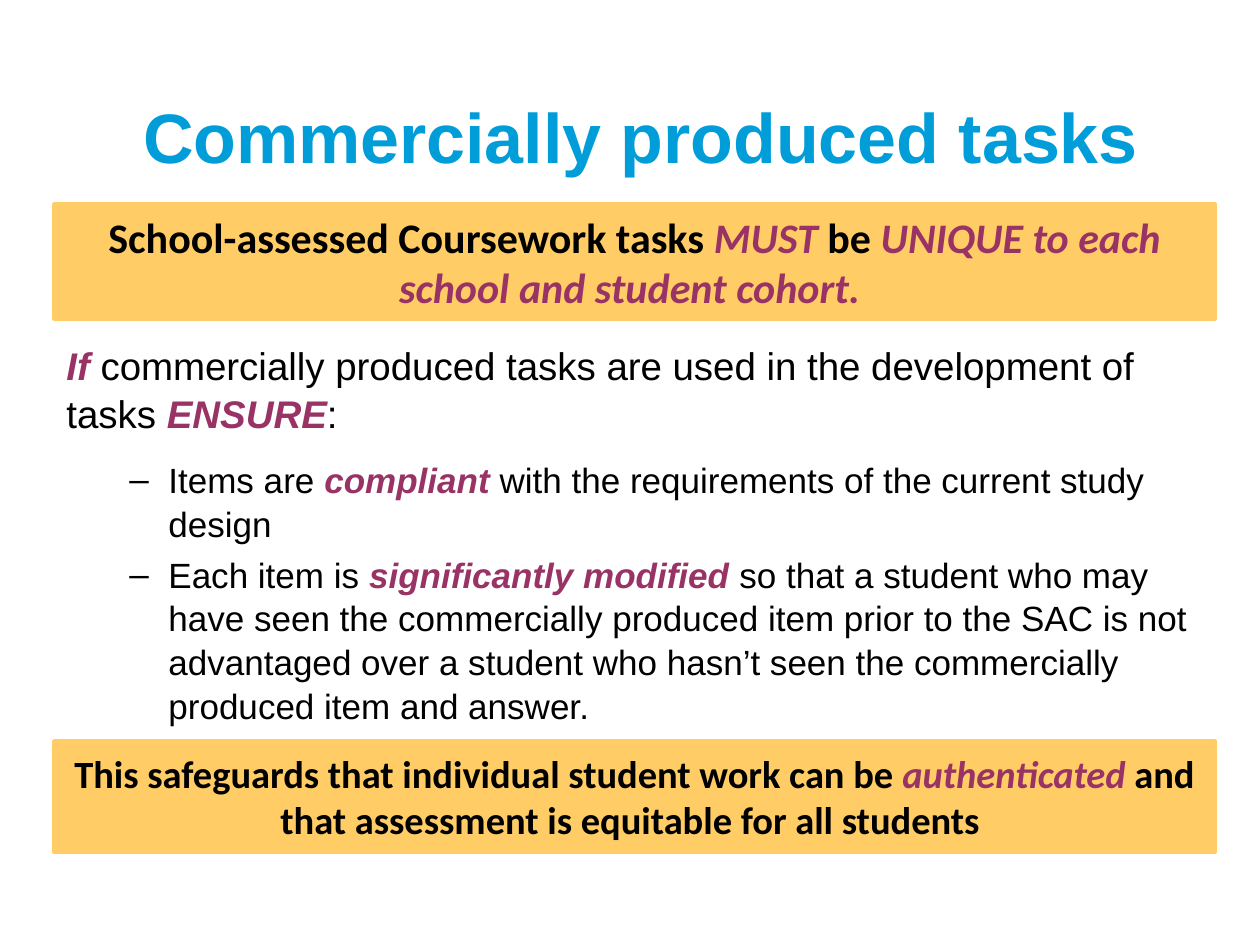
from pptx import Presentation
from pptx.dml.color import RGBColor
from pptx.enum.shapes import MSO_SHAPE
from pptx.enum.text import MSO_ANCHOR, PP_ALIGN
from pptx.oxml.ns import qn
from pptx.util import Emu, Pt

RECT = MSO_SHAPE.RECTANGLE
MIDDLE = MSO_ANCHOR.MIDDLE
CENTER = PP_ALIGN.CENTER
PX = 914400 / 126

THEME = {
    "title": RGBColor(0x00, 0x9D, 0xD9),
    "text": RGBColor(0x00, 0x00, 0x00),
    "accent": RGBColor(0x99, 0x33, 0x66),
    "band": RGBColor(0xFF, 0xCC, 0x66),
    "title_size": 40,
    "lead_size": 22,
    "item_size": 20,
    "body_font": "Arial",
    "band_font": "Calibri",
}


def px(*lengths):
    return [Emu(round(n * PX)) for n in lengths]


def add_runs(p, runs, font, size, bold=False):
    """Add (text, emphasised) runs; emphasis is bold italic in the accent colour."""
    for text, emphasised in runs:
        r = p.add_run()
        r.text = text
        r.font.name = font
        r.font.size = Pt(size)
        r.font.bold = bold or emphasised
        r.font.italic = emphasised
        r.font.color.rgb = THEME["accent" if emphasised else "text"]


prs = Presentation()
prs.slide_width, prs.slide_height = px(1260, 945)
s = prs.slides.add_slide(prs.slide_layouts[6])

# Title
tf = s.shapes.add_textbox(*px(105, 57, 1071, 157)).text_frame
tf.word_wrap = True
tf.vertical_anchor = MIDDLE
p = tf.paragraphs[0]
p.alignment = CENTER
add_runs(p, [("Commercially produced tasks", False)],
         THEME["body_font"], THEME["title_size"], bold=True)
p.runs[0].font.color.rgb = THEME["title"]

# Lead sentence and dashed items: size, space before, dashed, runs
body = [
    (THEME["lead_size"], 0, False, [
        ("If", True),
        (" commercially produced tasks are used in the development of tasks ", False),
        ("ENSURE", True),
        (":", False)]),
    (THEME["item_size"], 12, True, [
        ("Items are ", False),
        ("compliant ", True),
        ("with the requirements of the current study design", False)]),
    (THEME["item_size"], 4, True, [
        ("Each item is ", False),
        ("significantly modified ", True),
        ("so that a student who may have seen the commercially produced item "
         "prior to the SAC is not advantaged over a student who hasn’t seen "
         "the commercially produced item and answer.", False)]),
]
tf = s.shapes.add_textbox(*px(54, 334, 1181, 416)).text_frame
tf.word_wrap = True
for i, (size, before, dashed, runs) in enumerate(body):
    p = tf.add_paragraph() if i else tf.paragraphs[0]
    p.space_before = Pt(before)
    p.line_spacing = 1.04
    if dashed:
        p.level = 1
        margin, indent = px(102, -39)
        pPr = p._p.get_or_add_pPr()
        pPr.set("marL", str(margin))
        pPr.set("indent", str(indent))
        bullet_font = pPr.makeelement(qn("a:buFont"), {"typeface": THEME["body_font"]})
        bullet = pPr.makeelement(qn("a:buChar"), {"char": "–"})
        pPr.extend([bullet_font, bullet])
    add_runs(p, runs, THEME["body_font"], size)

# Highlighted bands: top, height, size, runs
bands = [
    (204, 115, 24, [
        ("School-assessed Coursework tasks ", False),
        ("MUST", True),
        (" be ", False),
        ("UNIQUE to each school and student cohort. ", True)]),
    (741, 111, 22, [
        ("This safeguards that individual student work can be ", False),
        ("authenticated", True),
        (" and that assessment is equitable for all students ", False)]),
]
for top, height, size, runs in bands:
    sp = s.shapes.add_shape(RECT, *px(54, top, 1161, height))
    sp.shadow.inherit = False
    sp.fill.solid()
    sp.fill.fore_color.rgb = THEME["band"]
    sp.line.color.rgb = THEME["band"]
    sp.line.width = Pt(2)
    tf = sp.text_frame
    tf.word_wrap = True
    tf.vertical_anchor = MIDDLE
    p = tf.paragraphs[0]
    p.alignment = CENTER
    add_runs(p, runs, THEME["band_font"], size, bold=True)

prs.save("out.pptx")
